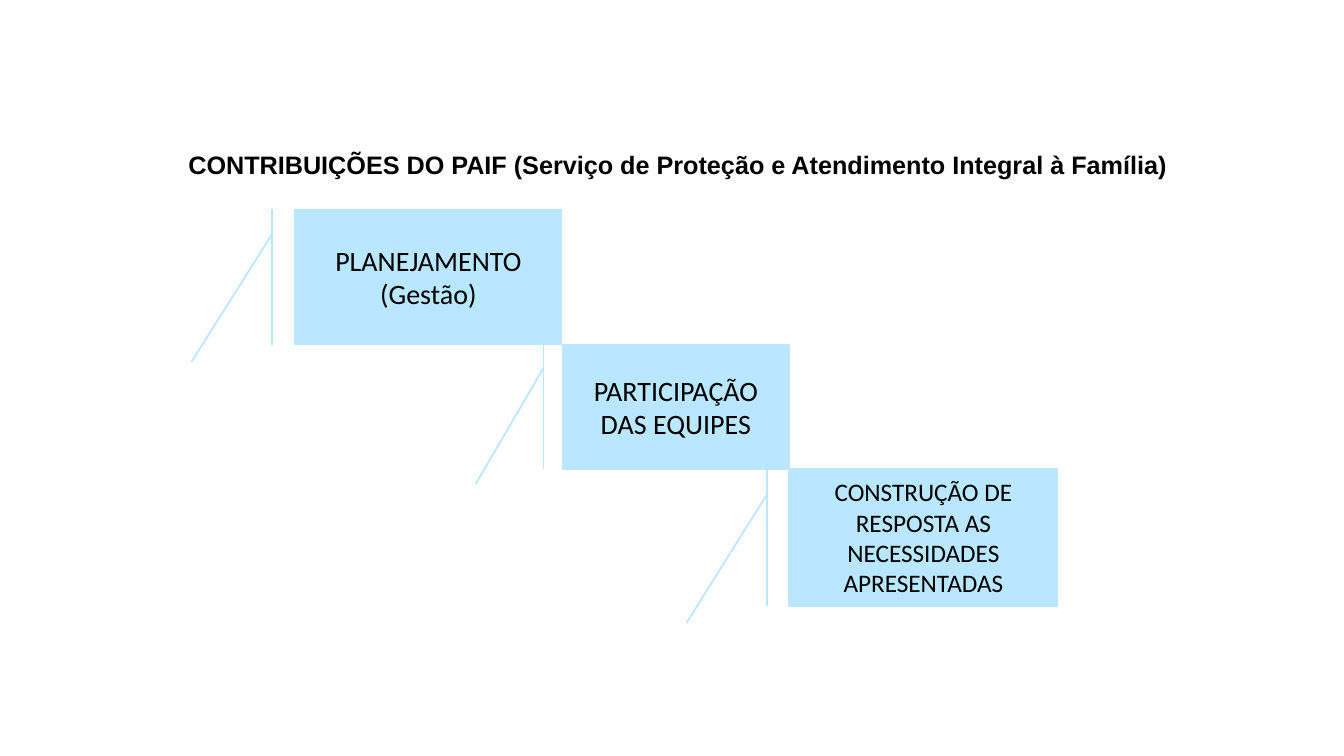
"""Build a slide with the PAIF contributions as a descending staircase of callouts."""
from dataclasses import dataclass

from pptx import Presentation
from pptx.dml.color import RGBColor
from pptx.enum.shapes import MSO_SHAPE
from pptx.enum.text import MSO_ANCHOR, MSO_AUTO_SIZE, PP_ALIGN
from pptx.slide import Slide
from pptx.text.text import TextFrame
from pptx.util import Emu, Inches, Pt


@dataclass(frozen=True)
class Theme:
    step_color: RGBColor = RGBColor(0xB9, 0xE7, 0xFD)
    text_color: RGBColor = RGBColor(0, 0, 0)
    title_font: str = "Arial"
    step_font: str = "Calibri"
    regular_size: int = 18
    large_size: int = 20
    line_width: float = 1.25


@dataclass(frozen=True)
class Area:
    """Position and size in percent of the slide."""
    left: float
    top: float
    width: float
    height: float


@dataclass(frozen=True)
class Step:
    text: str
    width: float
    height: float
    size: int
    callout: MSO_SHAPE


THEME = Theme()
SLIDE_WIDTH = Inches(13.33)
SLIDE_HEIGHT = Inches(7.5)
TITLE = "CONTRIBUIÇÕES DO PAIF (Serviço de Proteção e Atendimento Integral à Família)"
TITLE_AREA = Area(13.28, 19.07, 79.97, 5.33)
STAIR_LEFT, STAIR_TOP = 21.9, 27.6
BORDERED = MSO_SHAPE.LINE_CALLOUT_1_BORDER_AND_ACCENT_BAR
STEPS = (
    Step("PLANEJAMENTO (Gestão)", 19.95, 18, THEME.large_size,
         MSO_SHAPE.LINE_CALLOUT_1_ACCENT_BAR),
    Step("PARTICIPAÇÃO DAS EQUIPES", 16.88, 16.4, THEME.large_size, BORDERED),
    Step("CONSTRUÇÃO DE RESPOSTA AS NECESSIDADES APRESENTADAS", 19.95, 18.13,
         THEME.regular_size, BORDERED),
)


def place(area: Area) -> tuple[Emu, Emu, Emu, Emu]:
    """Turn percentages of the slide into lengths."""
    return (
        Emu(round(SLIDE_WIDTH * area.left / 100)),
        Emu(round(SLIDE_HEIGHT * area.top / 100)),
        Emu(round(SLIDE_WIDTH * area.width / 100)),
        Emu(round(SLIDE_HEIGHT * area.height / 100)),
    )


def write(frame: TextFrame, text: str, font_name: str, size: int,
          alignment: PP_ALIGN, bold: bool = False) -> None:
    """Fill a frame with one formatted paragraph."""
    frame.word_wrap = True
    frame.text = text
    paragraph = frame.paragraphs[0]
    paragraph.alignment = alignment
    font = paragraph.runs[0].font
    font.name = font_name
    font.size = Pt(size)
    font.bold = bold
    font.color.rgb = THEME.text_color


def add_title(page: Slide) -> None:
    """Add the heading above the staircase."""
    frame = page.shapes.add_textbox(*place(TITLE_AREA)).text_frame
    write(frame, TITLE, THEME.title_font, THEME.regular_size, PP_ALIGN.LEFT, bold=True)
    frame.auto_size = MSO_AUTO_SIZE.SHAPE_TO_FIT_TEXT


def add_step(page: Slide, step: Step, left: float, top: float) -> None:
    """Add one callout of the staircase."""
    area = Area(left, top, step.width, step.height)
    box = page.shapes.add_shape(step.callout, *place(area))
    box.shadow.inherit = False
    box.fill.solid()
    box.fill.fore_color.rgb = THEME.step_color
    box.line.color.rgb = THEME.step_color
    box.line.width = Pt(THEME.line_width)
    box.text_frame.vertical_anchor = MSO_ANCHOR.MIDDLE
    write(box.text_frame, step.text, THEME.step_font, step.size, PP_ALIGN.CENTER)


def main() -> None:
    """Build and save the deck."""
    deck = Presentation()
    deck.slide_width = SLIDE_WIDTH
    deck.slide_height = SLIDE_HEIGHT
    page = deck.slides.add_slide(deck.slide_layouts[6])
    add_title(page)
    left, top = STAIR_LEFT, STAIR_TOP
    for step in STEPS:
        add_step(page, step, left, top)
        left += step.width
        top += step.height
    deck.save("out.pptx")


if __name__ == "__main__":
    main()
